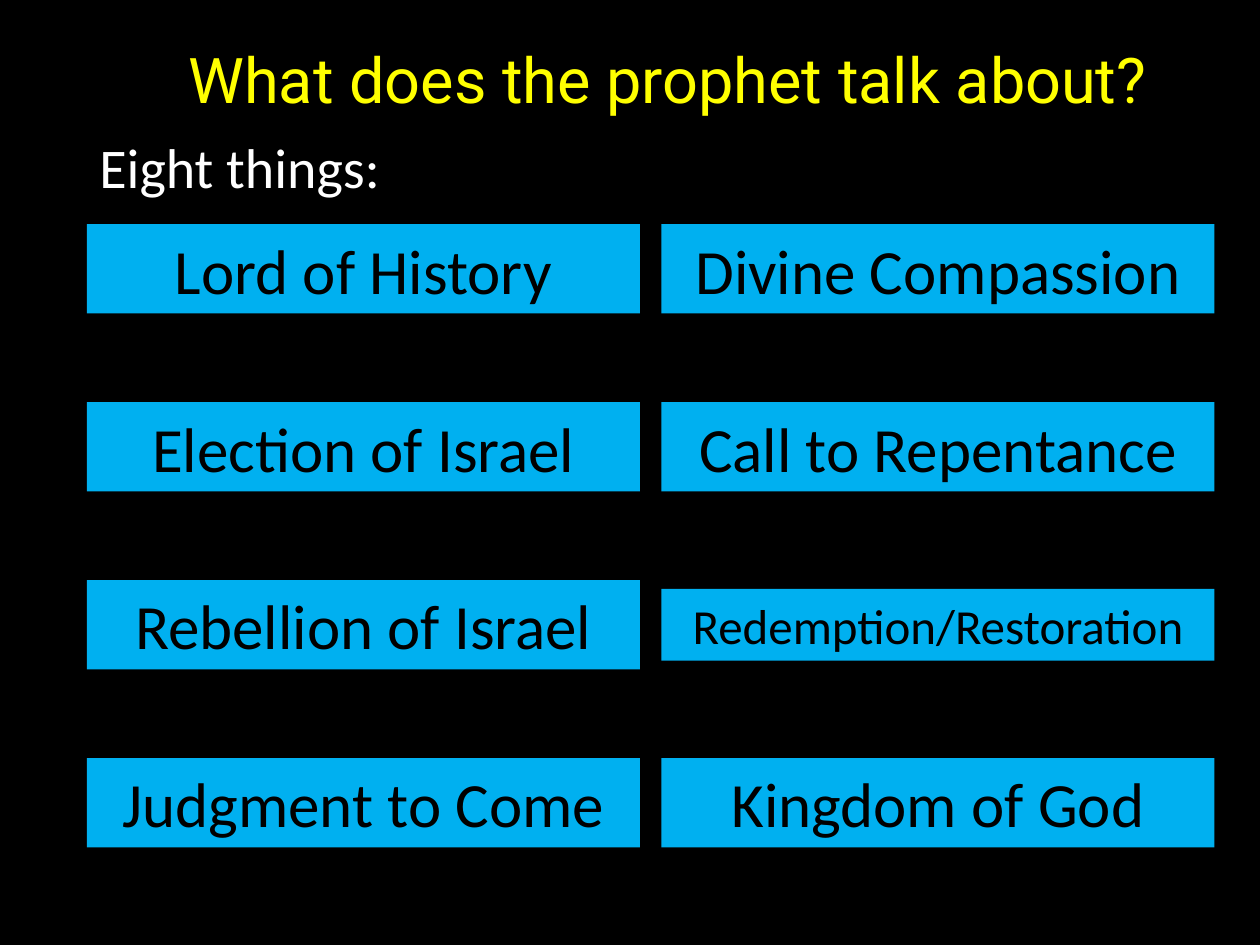
from dataclasses import dataclass

import pptx
import pptx.dml.color
import pptx.enum.shapes
import pptx.enum.text
import pptx.util

Pt = pptx.util.Pt
RGBColor = pptx.dml.color.RGBColor
ALIGN = pptx.enum.text.PP_ALIGN
ANCHOR = pptx.enum.text.MSO_ANCHOR
AUTO_SIZE = pptx.enum.text.MSO_AUTO_SIZE

BLACK = RGBColor(0x00, 0x00, 0x00)
WHITE = RGBColor(0xFF, 0xFF, 0xFF)
YELLOW = RGBColor(0xFF, 0xFF, 0x00)
BLUE = RGBColor(0x00, 0xB0, 0xF0)

LEFT = 49.7
COLUMN_PITCH = 328.3
FIRST_ROW_MIDDLE = 153.6
ROW_PITCH = 101.7
THEME_WIDTH = 316


@dataclass(frozen=True)
class Theme:
    text: str
    size: float = 36
    height: float = 51


COLUMNS = (
    (
        Theme("Lord of History"),
        Theme("Election of Israel"),
        Theme("Rebellion of Israel"),
        Theme("Judgment to Come"),
    ),
    (
        Theme("Divine Compassion"),
        Theme("Call to Repentance"),
        Theme("Redemption/Restoration", size=28, height=41),
        Theme("Kingdom of God"),
    ),
)


def write(sp, text: str, *, size: float, color: RGBColor,
          font: str = "Calibri", align=ALIGN.CENTER, anchor=ANCHOR.MIDDLE):
    tf = sp.text_frame
    tf.word_wrap = True
    tf.vertical_anchor = anchor
    p = tf.paragraphs[0]
    p.alignment = align
    r = p.add_run()
    r.text = text
    r.font.name = font
    r.font.size = Pt(size)
    r.font.color.rgb = color
    return p


def add_theme(s, theme: Theme, left: float, middle: float) -> None:
    sp = s.shapes.add_shape(
        pptx.enum.shapes.MSO_SHAPE.RECTANGLE,
        Pt(left), Pt(middle - theme.height / 2),
        Pt(THEME_WIDTH), Pt(theme.height))
    sp.shadow.inherit = False
    sp.fill.solid()
    sp.fill.fore_color.rgb = BLUE
    sp.line.fill.background()
    write(sp, theme.text, size=theme.size, color=BLACK)
    sp.text_frame.auto_size = AUTO_SIZE.SHAPE_TO_FIT_TEXT


def main() -> None:
    prs = pptx.Presentation()
    prs.slide_width, prs.slide_height = Pt(720), Pt(540)
    s = prs.slides.add_slide(prs.slide_layouts[6])
    s.background.fill.solid()
    s.background.fill.fore_color.rgb = BLACK

    title = s.shapes.add_textbox(Pt(LEFT), Pt(13.7), Pt(656.6), Pt(62.6))
    p = write(title, "What does the prophet talk about?",
              size=36, color=YELLOW, font="Roboto")
    p._p.get_or_add_pPr().set("marL", str(Pt(7.2)))

    intro = s.shapes.add_textbox(Pt(LEFT), Pt(76.3), Pt(620.6), Pt(47.5))
    p = write(intro, "Eight things:", size=32, color=WHITE,
              align=ALIGN.LEFT, anchor=ANCHOR.TOP)
    p.line_spacing = 0.9
    p.space_before = Pt(10)

    for col, themes in enumerate(COLUMNS):
        for row, theme in enumerate(themes):
            add_theme(s, theme, LEFT + col * COLUMN_PITCH,
                      FIRST_ROW_MIDDLE + row * ROW_PITCH)

    prs.save("out.pptx")


if __name__ == "__main__":
    main()
